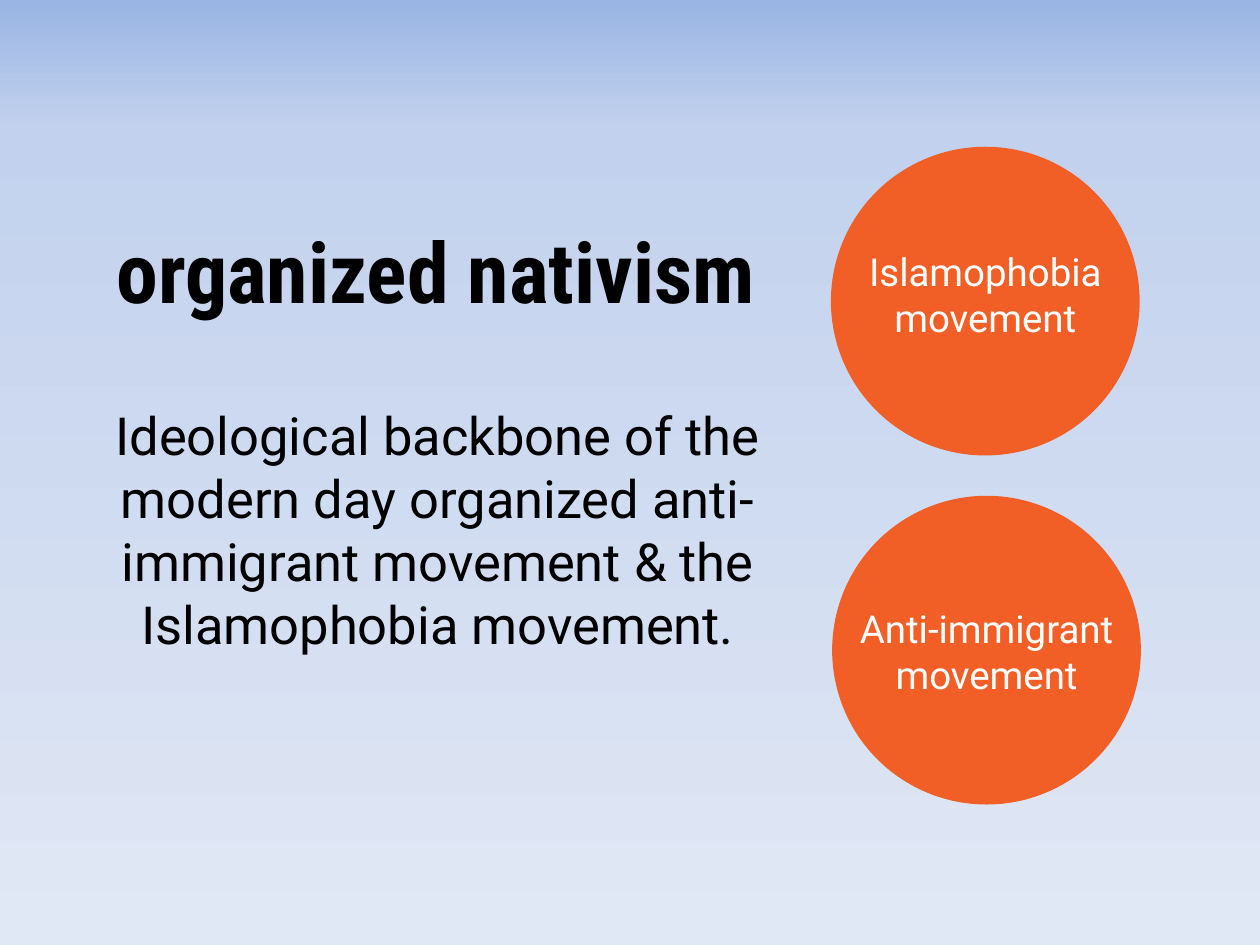
from copy import deepcopy
from dataclasses import dataclass

from pptx import Presentation
from pptx.dml.color import RGBColor as RGB
from pptx.enum.shapes import MSO_SHAPE as SHAPE
from pptx.enum.text import MSO_ANCHOR as ANCHOR, MSO_AUTO_SIZE as AUTO, PP_ALIGN as ALIGN
from pptx.oxml.ns import qn
from pptx.util import Inches, Pt


@dataclass(frozen=True)
class Theme:
    sky: tuple = ((0, "9AB5E4"), (0.14, "C2D1ED"), (1, "E1E8F5"))
    ink: str = "000000"
    circle: str = "F15F27"
    label: str = "FFFFFF"
    heading_font: str = "Roboto Condensed"
    text_font: str = "Roboto"
    heading_size: int = 48
    statement_size: int = 30
    label_size: int = 22


THEME = Theme()


def paint_background(slide):
    """Vertical gradient, darkest at the top."""
    fill = slide.background.fill
    fill.gradient()
    fill.gradient_angle = 270
    stop_list = slide.element.find(".//" + qn("a:gsLst"))
    stop_list.append(deepcopy(stop_list[-1]))
    for stop, (position, color) in zip(fill.gradient_stops, THEME.sky):
        stop.position = position
        stop.color.rgb = RGB.from_string(color)


def place(shape, box):
    shape.left, shape.top, shape.width, shape.height = map(Inches, box)


def write(shape, words, font, size, color, anchor=ANCHOR.MIDDLE, bold=False):
    """Put one centred paragraph into a text shape."""
    frame = shape.text_frame
    frame.word_wrap = True
    frame.auto_size = AUTO.NONE
    frame.vertical_anchor = anchor
    frame.margin_left = frame.margin_right = Inches(0.1)
    frame.margin_top = frame.margin_bottom = Inches(0.1)
    paragraph = frame.paragraphs[0]
    paragraph.alignment = ALIGN.CENTER
    paragraph.space_before = Pt(0)
    run = paragraph.add_run()
    run.text = words
    run.font.name = font
    run.font.size = Pt(size)
    run.font.bold = bold
    run.font.color.rgb = RGB.from_string(color)
    return paragraph


def add_heading(slide, box, words):
    heading = slide.shapes.title
    place(heading, box)
    write(heading, words, THEME.heading_font, THEME.heading_size, THEME.ink, bold=True)


def add_statement(slide, box, words):
    statement = slide.placeholders[1]
    place(statement, box)
    paragraph = write(statement, words, THEME.text_font, THEME.statement_size, THEME.ink)
    # Plain paragraph: no bullet, no hanging indent
    properties = paragraph._p.get_or_add_pPr()
    properties.set("marL", "0")
    properties.set("indent", "0")
    properties.append(properties.makeelement(qn("a:buNone"), {}))


def add_movement(slide, box, label_drop, words):
    """Circle with its label, grouped; label_drop is measured from the box top."""
    left, top, width, height = box
    movement = slide.shapes.add_group_shape().shapes
    circle = movement.add_shape(SHAPE.OVAL, *map(Inches, box))
    circle.shadow.inherit = False
    circle.fill.solid()
    circle.fill.fore_color.rgb = RGB.from_string(THEME.circle)
    circle.line.color.rgb = RGB.from_string(THEME.circle)
    circle.line.width = Pt(0.75)

    label_width = 2.25
    label_left = left + (width - label_width) / 2
    label = movement.add_textbox(*map(Inches, (label_left, top + label_drop, label_width, 1.04)))
    write(label, words, THEME.text_font, THEME.label_size, THEME.label, ANCHOR.TOP)


def main():
    deck = Presentation()
    deck.slide_width, deck.slide_height = Inches(10), Inches(7.5)
    slide = deck.slides.add_slide(deck.slide_layouts[1])
    paint_background(slide)

    # Left: term and definition
    add_heading(slide, (-0.08, 1.2, 7.08, 1.89), "organized nativism")
    add_statement(
        slide, (0.45, 2.39, 6.05, 3.62),
        "Ideological backbone of the modern day organized anti-immigrant movement "
        "& the Islamophobia movement.")

    # Right: the two movements
    diameter = 2.44
    add_movement(slide, (6.61, 3.94, diameter, diameter), 0.76, "Anti-immigrant movement")
    add_movement(slide, (6.6, 1.17, diameter, diameter), 0.7, "Islamophobia movement")

    deck.save("out.pptx")


if __name__ == "__main__":
    main()
